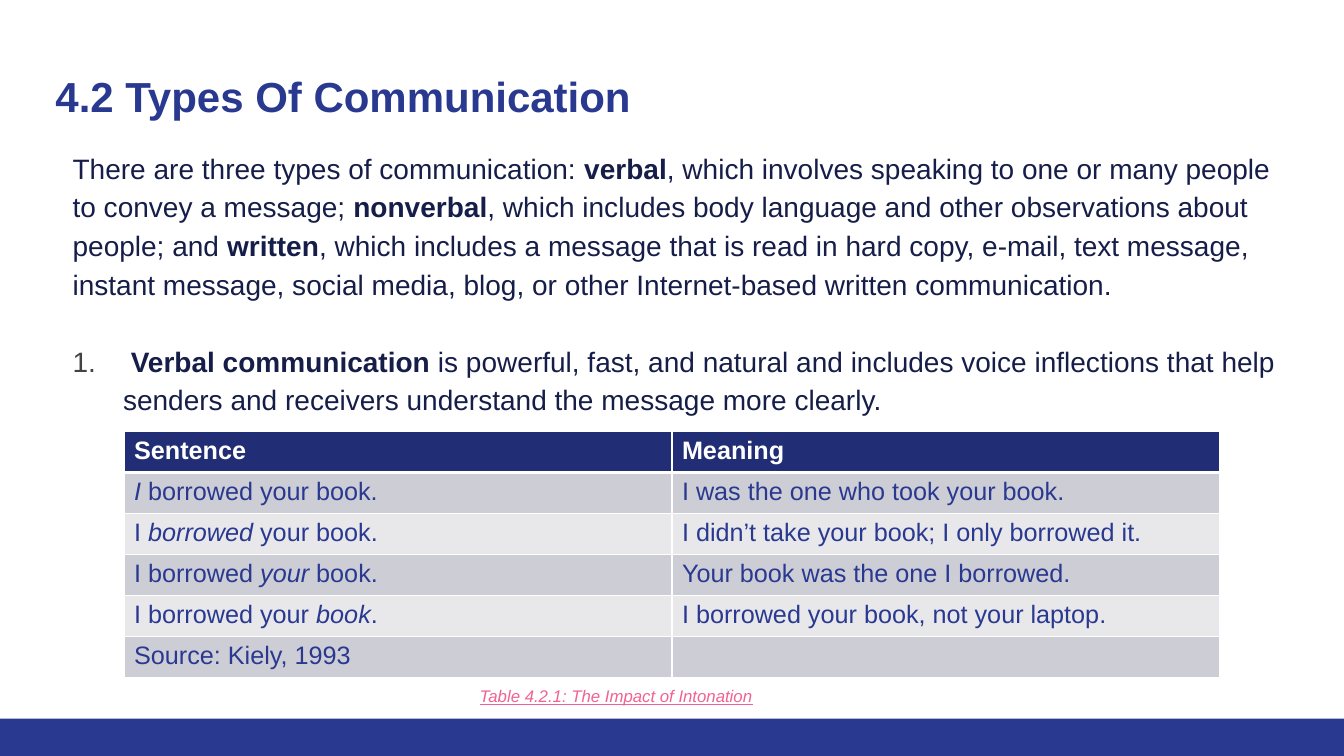
from dataclasses import dataclass

from lxml.etree import SubElement
from pptx import Presentation
from pptx.dml.color import RGBColor
from pptx.enum.shapes import MSO_SHAPE
from pptx.enum.text import MSO_ANCHOR, MSO_AUTO_SIZE, PP_ALIGN
from pptx.oxml.ns import qn
from pptx.util import Inches, Pt


@dataclass(frozen=True)
class Theme:
    font: str = "Arial"
    blue: str = "2A3990"
    navy: str = "151D48"
    header: str = "212D74"
    band_dark: str = "CDCDD6"
    band_light: str = "E8E8EB"
    white: str = "FFFFFF"
    pink: str = "F06292"
    number: str = "434343"
    title_size: int = 30
    body_size: int = 20
    table_size: int = 18
    caption_size: int = 12


THEME = Theme()

TITLE = "4.2 Types Of Communication"
# Asterisks enclose the emphasised words.
INTRODUCTION = (
    "There are three types of communication: *verbal*, which involves speaking to one or "
    "many people to convey a message; *nonverbal*, which includes body language and other "
    "observations about people; and *written*, which includes a message that is read in hard "
    "copy, e-mail, text message, instant message, social media, blog, or other Internet-based "
    "written communication."
)
VERBAL_ITEM = (
    " *Verbal communication *is powerful, fast, and natural and includes voice inflections "
    "that help senders and receivers understand the message more clearly."
)
INTONATION_ROWS = [
    ("Sentence", "Meaning"),
    ("*I* borrowed your book.", "I was the one who took your book."),
    ("I *borrowed* your book.", "I didn’t take your book; I only borrowed it."),
    ("I borrowed *your* book.", "Your book was the one I borrowed."),
    ("I borrowed your *book*.", "I borrowed your book, not your laptop."),
    ("Source: Kiely, 1993", ""),
]
CAPTION = "Table 4.2.1: The Impact of Intonation"


def write(paragraph, text, size, color, emphasis="bold", bold=False):
    """Fill a paragraph, giving the words between asterisks the named emphasis."""
    paragraph.alignment = PP_ALIGN.LEFT
    for index, part in enumerate(text.split("*")):
        if not part:
            continue
        run = paragraph.add_run()
        run.text = part
        font = run.font
        font.name, font.size, font.bold = THEME.font, Pt(size), bold
        font.color.rgb = RGBColor.from_string(color)
        if index % 2:
            setattr(font, emphasis, True)


def place(shape, left, top, width, height):
    shape.left, shape.top = Inches(left), Inches(top)
    shape.width, shape.height = Inches(width), Inches(height)


def prepare_frame(shape, margin):
    """Set wrapping, anchoring and equal insets, and return the text frame."""
    frame = shape.text_frame
    frame.word_wrap = True
    frame.auto_size = MSO_AUTO_SIZE.NONE
    frame.vertical_anchor = MSO_ANCHOR.TOP
    frame.margin_left = frame.margin_right = Inches(0.1)
    frame.margin_top = frame.margin_bottom = Inches(margin)
    return frame


def add_footer_bar(slide, left, top, width, height):
    bar = slide.shapes.add_shape(
        MSO_SHAPE.RECTANGLE, Inches(left), Inches(top), Inches(width), Inches(height)
    )
    bar.shadow.inherit = False
    bar.fill.solid()
    bar.fill.fore_color.rgb = RGBColor.from_string(THEME.blue)
    bar.line.fill.background()


def fill_title(slide, left, top, width, height):
    title = slide.shapes.title
    place(title, left, top, width, height)
    frame = prepare_frame(title, 0.1)
    write(frame.paragraphs[0], TITLE, THEME.title_size, THEME.blue, bold=True)


def format_list_paragraph(paragraph, left_margin, indent, numbered):
    properties = paragraph._p.get_or_add_pPr()
    properties.set("marL", str(Inches(left_margin)))
    properties.set("indent", str(Inches(indent)))
    if numbered:
        color = SubElement(properties, qn("a:buClr"))
        SubElement(color, qn("a:srgbClr"), val=THEME.number)
        SubElement(properties, qn("a:buFont"), typeface=THEME.font)
        SubElement(properties, qn("a:buAutoNum"), type="arabicPeriod")
    else:
        SubElement(properties, qn("a:buNone"))
    paragraph.line_spacing = 1.15
    paragraph.space_before = Pt(0)


def fill_body(slide, left, top, width, height):
    body = slide.placeholders[1]
    place(body, left, top, width, height)
    frame = prepare_frame(body, 0.1)
    introduction, item = frame.paragraphs[0], frame.add_paragraph()
    format_list_paragraph(introduction, 0.17, 0, numbered=False)
    format_list_paragraph(item, 0.67, -0.5, numbered=True)
    item.space_before = Pt(27.5)
    write(introduction, INTRODUCTION, THEME.body_size, THEME.navy)
    write(item, VERBAL_ITEM, THEME.body_size, THEME.navy)


def set_cell_borders(cell, above, below):
    properties = cell._tc.get_or_add_tcPr()
    for side, points in (("lnL", 1), ("lnR", 1), ("lnT", above), ("lnB", below)):
        line = SubElement(properties, qn(f"a:{side}"), w=str(Pt(points)))
        fill = SubElement(line, qn("a:solidFill"))
        SubElement(fill, qn("a:srgbClr"), val=THEME.white)


def add_intonation_table(slide, left, top, width, height):
    table = slide.shapes.add_table(
        len(INTONATION_ROWS), 2, Inches(left), Inches(top), Inches(width), Inches(height)
    ).table
    for row_index, texts in enumerate(INTONATION_ROWS):
        is_header = row_index == 0
        band = THEME.band_dark if row_index % 2 else THEME.band_light
        for column_index, text in enumerate(texts):
            cell = table.cell(row_index, column_index)
            set_cell_borders(cell, 3 if row_index == 1 else 1, 3 if is_header else 1)
            cell.fill.solid()
            cell.fill.fore_color.rgb = RGBColor.from_string(THEME.header if is_header else band)
            color = THEME.white if is_header else THEME.blue
            paragraph = cell.text_frame.paragraphs[0]
            paragraph.font.size = Pt(THEME.table_size)
            write(paragraph, text, THEME.table_size, color, "italic", bold=is_header)


def add_caption(slide, left, top, width, height):
    box = slide.shapes.add_textbox(Inches(left), Inches(top), Inches(width), Inches(height))
    paragraph = prepare_frame(box, 0.05).paragraphs[0]
    write(paragraph, CAPTION, THEME.caption_size, THEME.pink)
    font = paragraph.runs[0].font
    font.italic = font.underline = True


def main():
    presentation = Presentation()
    presentation.slide_width, presentation.slide_height = Inches(13.33), Inches(7.5)
    slide = presentation.slides.add_slide(presentation.slide_layouts[1])
    add_footer_bar(slide, 0, 7.13, 13.33, 0.37)
    fill_title(slide, 0.45, 0.6, 12.42, 0.89)
    fill_body(slide, 0.45, 1.35, 12.42, 5.33)
    add_intonation_table(slide, 1.23, 4.28, 10.87, 2.44)
    add_caption(slide, 4.66, 6.75, 6.66, 0.3)
    presentation.save("out.pptx")


if __name__ == "__main__":
    main()
